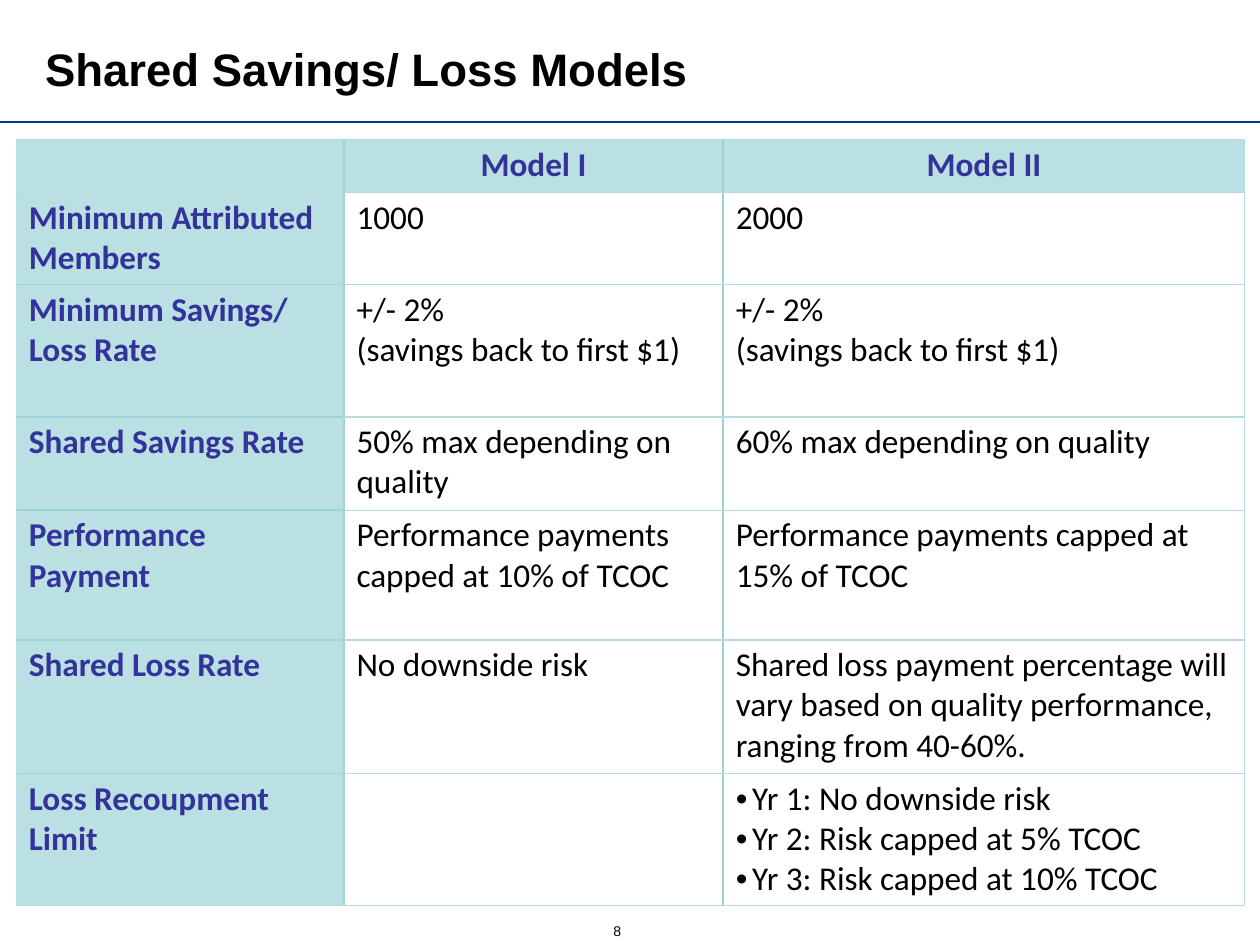
"""Build the slide comparing the two shared savings and loss models."""
from dataclasses import dataclass

from lxml.etree import SubElement
from pptx import Presentation
from pptx.dml.color import RGBColor
from pptx.enum.text import MSO_ANCHOR, PP_ALIGN
from pptx.oxml.ns import qn
from pptx.util import Inches, Pt


@dataclass(frozen=True)
class Theme:
    ink: str = "000000"
    rule: str = "003399"
    heading: str = "333399"
    heading_fill: str = "BBE0E3"
    outer_border: tuple = ("B6DCDF", 0.75)
    inner_border: tuple = ("9ED3D7", 1)
    title_font: str = "Arial"
    table_font: str = "Calibri"
    title_size: int = 26
    table_size: int = 19
    number_size: int = 8


THEME = Theme()
COLUMN_WIDTHS = (2.6, 3.01, 4.14)
ROW_HEIGHTS = (0.42, 0.73, 1.05, 0.74, 1.03, 1.06, 1.05)
MODELS = (
    ("", "Model I", "Model II"),
    ("Minimum Attributed Members", "1000", "2000"),
    ("Minimum Savings/ Loss Rate",
     "+/- 2%\n(savings back to first $1)",
     "+/- 2%\n(savings back to first $1)"),
    ("Shared Savings Rate",
     "50% max depending on quality",
     "60% max depending on quality"),
    ("Performance Payment",
     "Performance payments capped at 10% of TCOC",
     "Performance payments capped at 15% of TCOC"),
    ("Shared Loss Rate",
     "No downside risk",
     "Shared loss payment percentage will vary based on quality performance, "
     "ranging from 40-60%."),
    ("Loss Recoupment Limit", "",
     "• Yr 1: No downside risk\n"
     "• Yr 2: Risk capped at 5% TCOC\n"
     "• Yr 3: Risk capped at 10% TCOC"),
)


def apply_format(target, values):
    for name, value in values.items():
        setattr(target, name, value)


def style_font(font, name, size, color, bold=False):
    apply_format(font, {"name": name, "size": Pt(size), "bold": bold})
    font.color.rgb = RGBColor.from_string(color)


def add_bullet(paragraph):
    properties = paragraph._p.get_or_add_pPr()
    properties.set("marL", str(Inches(0.13)))
    properties.set("indent", str(Inches(-0.13)))
    SubElement(properties, qn("a:buFont"), typeface=THEME.title_font)
    SubElement(properties, qn("a:buChar"), char="•")


def add_label(slide, bounds, text, size, frame_format, align, bold=False):
    box = slide.shapes.add_textbox(*map(Inches, bounds))
    apply_format(box.text_frame, frame_format)
    paragraph = box.text_frame.paragraphs[0]
    paragraph.text = text
    paragraph.alignment = align
    style_font(paragraph.font, THEME.title_font, size, THEME.ink, bold)


def add_rule(slide):
    rule = slide.shapes.add_connector(
        1, Inches(0), Inches(0.97), Inches(10), Inches(0.97))
    rule.line.color.rgb = RGBColor.from_string(THEME.rule)
    rule.line.width = Pt(1.5)
    SubElement(rule._element.spPr, qn("a:effectLst"))


def set_borders(cell, row, column):
    last_row, last_column = len(ROW_HEIGHTS) - 1, len(COLUMN_WIDTHS) - 1
    inner_sides = {
        "lnL": column > 0,
        "lnR": column < last_column,
        "lnT": column == 0 and row > 1,
        "lnB": column == 0 and 0 < row < last_row,
    }
    properties = cell._tc.get_or_add_tcPr()
    for side, inner in inner_sides.items():
        color, width = THEME.inner_border if inner else THEME.outer_border
        border = SubElement(properties, qn(f"a:{side}"), w=str(Pt(width)))
        fill = SubElement(border, qn("a:solidFill"))
        SubElement(fill, qn("a:srgbClr"), val=color)


def fill_cell(cell, text, row, column):
    heading = row == 0 or column == 0
    apply_format(cell, {"margin_top": Inches(0.04), "margin_bottom": Inches(0.04)})
    set_borders(cell, row, column)
    if heading:
        cell.fill.solid()
        cell.fill.fore_color.rgb = RGBColor.from_string(THEME.heading_fill)
    else:
        cell.fill.background()
    cell.text = text.replace("• ", "")
    for paragraph, line in zip(cell.text_frame.paragraphs, text.split("\n")):
        if line.startswith("•"):
            add_bullet(paragraph)
        paragraph.alignment = PP_ALIGN.CENTER if row == 0 else PP_ALIGN.LEFT
        style_font(paragraph.font, THEME.table_font, THEME.table_size,
                   THEME.heading if heading else THEME.ink, heading)


def add_model_table(slide):
    models = slide.shapes.add_table(
        len(ROW_HEIGHTS), len(COLUMN_WIDTHS), Inches(0.13), Inches(1.11),
        Inches(sum(COLUMN_WIDTHS)), Inches(sum(ROW_HEIGHTS))).table
    apply_format(models, {"first_row": False, "horz_banding": False})
    for column, width in zip(models.columns, COLUMN_WIDTHS):
        column.width = Inches(width)
    for row, height in zip(models.rows, ROW_HEIGHTS):
        row.height = Inches(height)
    for row, texts in enumerate(MODELS):
        for column, text in enumerate(texts):
            fill_cell(models.cell(row, column), text, row, column)


def main():
    deck = Presentation()
    apply_format(deck, {"slide_width": Inches(10), "slide_height": Inches(7.5)})
    slide = deck.slides.add_slide(deck.slide_layouts[6])
    add_rule(slide)
    add_label(slide, (4.77, 7.27, 0.34, 0.23), "8", THEME.number_size,
              {"word_wrap": False}, PP_ALIGN.LEFT)
    add_model_table(slide)
    add_label(slide, (0.26, 0.14, 7.87, 0.81), "Shared Savings/ Loss Models",
              THEME.title_size,
              {"word_wrap": True, "vertical_anchor": MSO_ANCHOR.MIDDLE},
              PP_ALIGN.LEFT, bold=True)
    deck.save("out.pptx")


if __name__ == "__main__":
    main()
